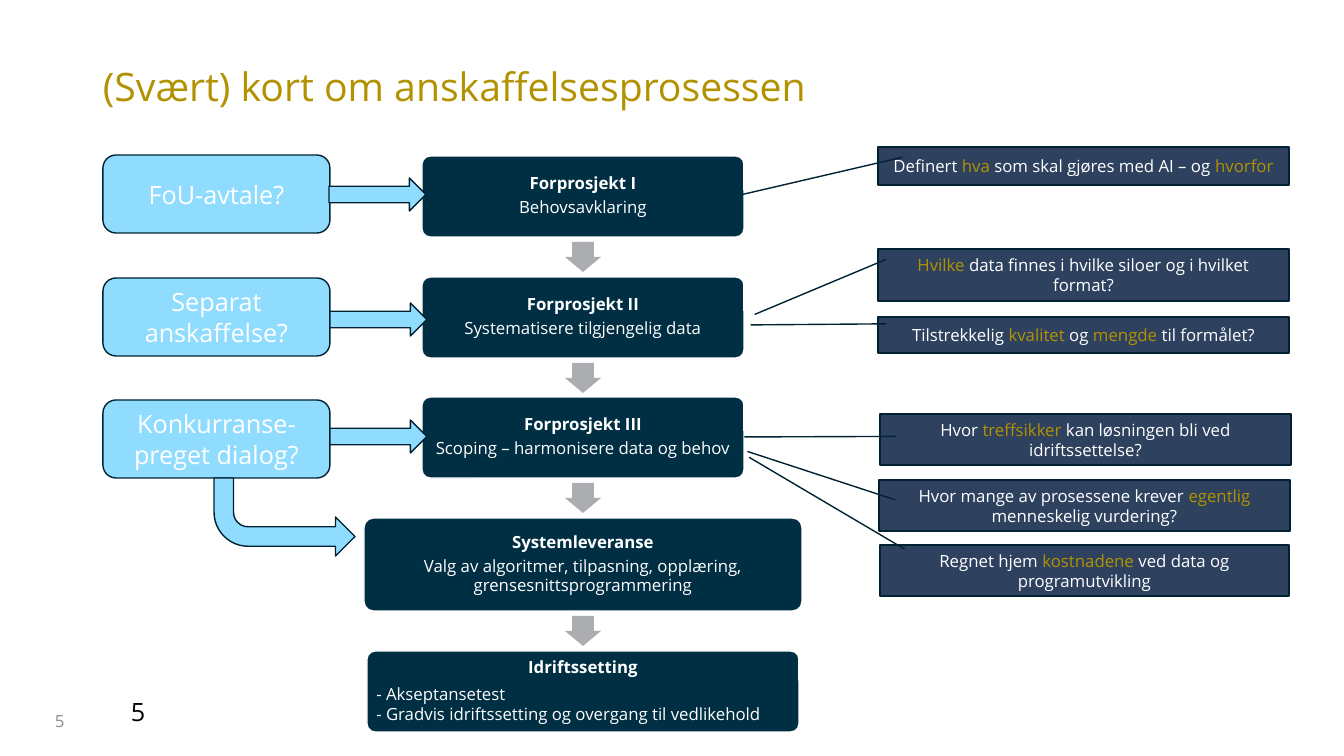
import pptx
import pptx.dml.color
import pptx.enum.shapes
import pptx.enum.text
import pptx.util

PX = 9071.43  # EMU per px, 100.8 px to the inch
SHAPE = pptx.enum.shapes.MSO_SHAPE
ALIGN = pptx.enum.text.PP_ALIGN
ANCHOR = pptx.enum.text.MSO_ANCHOR
COLORS = {
    "white": "FFFFFF", "black": "000000", "grey": "8C8C8C", "gold": "B29200",
    "step": "002E43", "flow": "ABADB0", "sky": "90DCFF", "edge": "002232",
    "callout": "2E4260",
}


def px(length):
    return pptx.util.Emu(round(length * PX))


def rgb(name):
    return pptx.dml.color.RGBColor.from_string(COLORS[name])


def write(paragraph, text, size=12, color="white", bold=False, align=ALIGN.CENTER,
          spacing=None, after=None):
    """Fill a paragraph; parts between asterisks become gold."""
    paragraph.alignment = align
    if spacing is not None:
        paragraph.line_spacing = spacing
    if after is not None:
        paragraph.space_after = pptx.util.Pt(after)
    for index, part in enumerate(text.split("*")):
        if part:
            run = paragraph.add_run()
            run.text = part
            run.font.name = "Open Sans"
            run.font.size = pptx.util.Pt(size)
            run.font.bold = bold
            run.font.color.rgb = rgb("gold" if index % 2 else color)


class ProcessSlide:
    def __init__(self, deck):
        self.slide = deck.slides.add_slide(deck.slide_layouts[6])

    def label(self, text, left, top, width, height, anchor=ANCHOR.TOP, bottom=5, **style):
        box = self.slide.shapes.add_textbox(px(left), px(top), px(width), px(height))
        frame = box.text_frame
        frame.word_wrap = True
        frame.vertical_anchor = anchor
        frame.margin_bottom = px(bottom)
        write(frame.paragraphs[0], text, align=ALIGN.LEFT, **style)

    def block(self, kind, left, top, width, height, fill, line=None, adjust=()):
        shape = self.slide.shapes.add_shape(kind, px(left), px(top), px(width), px(height))
        shape.shadow.inherit = False
        shape.fill.solid()
        shape.fill.fore_color.rgb = rgb(fill)
        if line:
            shape.line.color.rgb = rgb(line)
            shape.line.width = pptx.util.Pt(1)
        else:
            shape.line.fill.background()
        for index, value in enumerate(adjust):
            shape.adjustments[index] = value
        shape.text_frame.word_wrap = True
        shape.text_frame.vertical_anchor = ANCHOR.MIDDLE
        return shape

    def step(self, heading, details, left, top, width, height, **style):
        shape = self.block(SHAPE.ROUNDED_RECTANGLE, left, top, width, height,
                           "step", "white", [0.1])
        frame = shape.text_frame
        frame.margin_left = frame.margin_right = px(7)
        frame.margin_top = frame.margin_bottom = px(7)
        write(frame.paragraphs[0], heading, bold=True, spacing=0.9, after=4.2)
        for detail in details:
            write(frame.add_paragraph(), detail, **style)

    def flow_arrow(self, top):
        self.block(SHAPE.DOWN_ARROW, 565, top, 36, 30, "flow", adjust=[0.6, 0.5])

    def question(self, text, top):
        shape = self.block(SHAPE.ROUNDED_RECTANGLE, 103, top, 227, 78, "sky", "edge")
        write(shape.text_frame.paragraphs[0], text, size=18)

    def entry_arrow(self, left, top):
        self.block(SHAPE.RIGHT_ARROW, left, top, 97, 33, "sky", "edge")

    def bent_arrow(self, left, top, width, height):
        shape = self.block(SHAPE.BENT_ARROW, left, top, width, height, "sky", "edge")
        shape.rotation = 180
        shape._element.spPr.xfrm.set("flipH", "1")

    def callout(self, text, left, top, width, height, pointer):
        shape = self.block(SHAPE.LINE_CALLOUT_1, left, top, width, height,
                           "callout", "edge", pointer)
        write(shape.text_frame.paragraphs[0], text)


CENTERED = {"spacing": 0.9, "after": 4.2}
STEPS = [
    ("Forprosjekt I", ["Behovsavklaring"], 422, 156, 322, 81, CENTERED),
    ("Forprosjekt II", ["Systematisere tilgjengelig data"], 422, 277, 322, 81, CENTERED),
    ("Forprosjekt III", ["Scoping – harmonisere data og behov"], 422, 397, 322, 81, CENTERED),
    ("Systemleveranse",
     ["Valg av algoritmer, tilpasning, opplæring, grensesnittsprogrammering"],
     364, 518, 438, 93, CENTERED),
    ("Idriftssetting",
     ["- Akseptansetest", "- Gradvis idriftssetting og overgang til vedlikehold"],
     367, 651, 432, 81, {"align": ALIGN.LEFT}),
]
QUESTIONS = [
    ("FoU-avtale?", 155, 329, 178),
    ("Separat anskaffelse?", 278, 330, 303),
    ("Konkurranse-preget dialog?", 400, 330, 420),
]
CALLOUTS = [
    ("Regnet hjem *kostnadene* ved data og programutvikling",
     880, 545, 409, 51, [0.08, 0.06, -1.72, -0.32]),
    ("Hvor *treffsikker* kan løsningen bli ved idriftssettelse?",
     880, 414, 411, 51, [0.44, 0.04, 0.45, -0.33]),
    ("Hvor mange av prosessene krever *egentlig* menneskelig vurdering?",
     879, 480, 411, 51, [0.39, 0.04, -0.56, -0.32]),
    ("Definert *hva* som skal gjøres med AI – og *hvorfor*",
     878, 147, 411, 38, [0.27, 0.06, 1.25, -0.33]),
    ("*Hvilke* data finnes i hvilke siloer og i hvilket format?",
     878, 249, 411, 52, [0.2, 0.02, 1.26, -0.3]),
    ("Tilstrekkelig *kvalitet* og *mengde* til formålet?",
     878, 317, 411, 36, [0.19, 0.02, 0.22, -0.31]),
]


def main():
    deck = pptx.Presentation()
    deck.slide_width, deck.slide_height = px(1344), px(756)
    page = ProcessSlide(deck)

    page.label("5", 45, 701, 302, 40, ANCHOR.MIDDLE, color="grey")
    page.label("(Svært) kort om anskaffelsesprosessen", 93, 40, 1159, 146,
               ANCHOR.MIDDLE, bottom=53, size=28, color="gold", spacing=0.9)
    page.label("5", 121, 691, 227, 40, size=18, color="black")

    for heading, details, left, top, width, height, style in STEPS:
        page.step(heading, details, left, top, width, height, **style)
    for _, _, _, top, _, height, _ in STEPS[:-1]:
        page.flow_arrow(top + height + 5)

    for text, top, _, _ in QUESTIONS:
        page.question(text, top)
    page.bent_arrow(214, 478, 141, 78)
    for _, _, arrow_left, arrow_top in QUESTIONS:
        page.entry_arrow(arrow_left, arrow_top)

    for callout in CALLOUTS:
        page.callout(*callout)

    deck.save("out.pptx")


if __name__ == "__main__":
    main()
